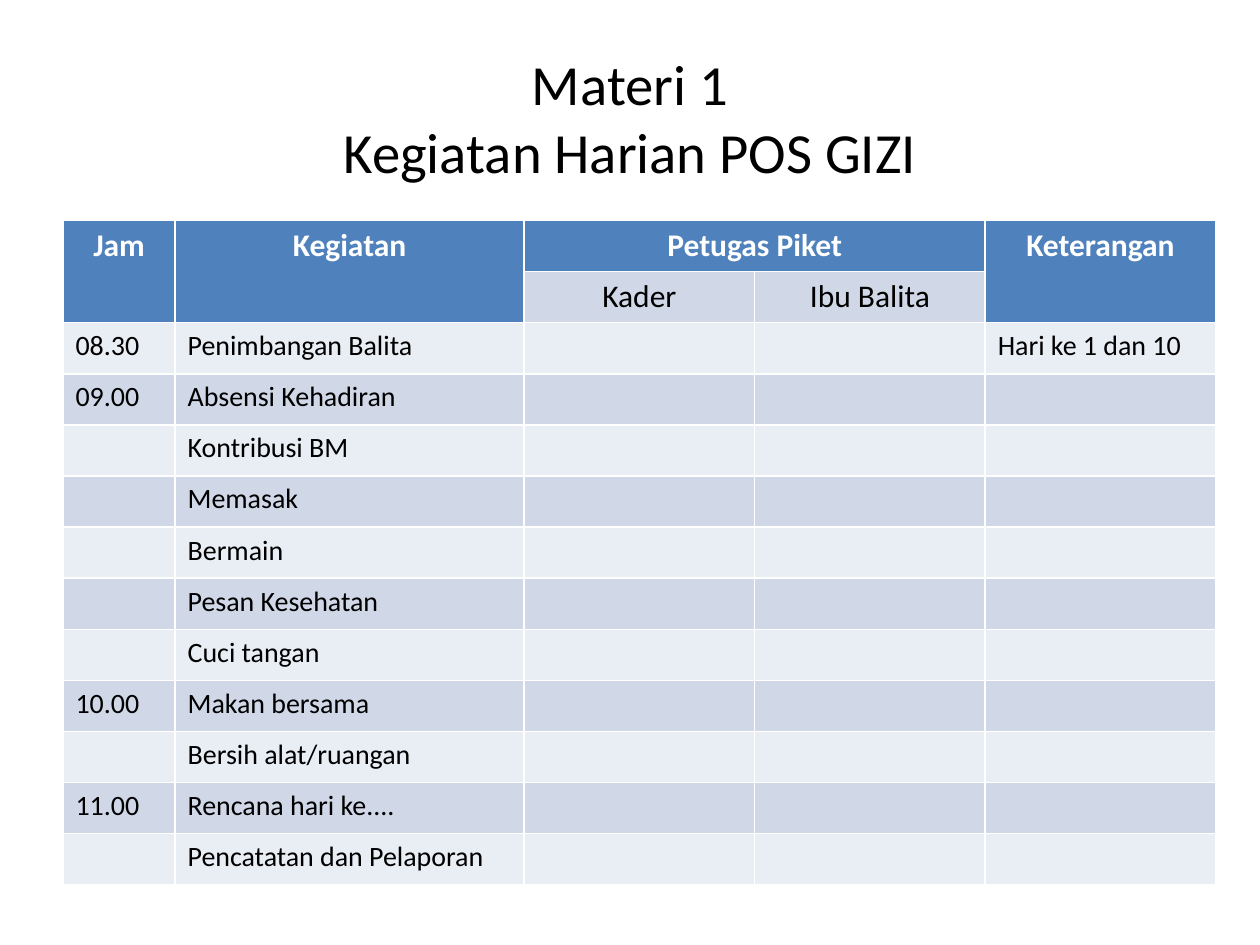
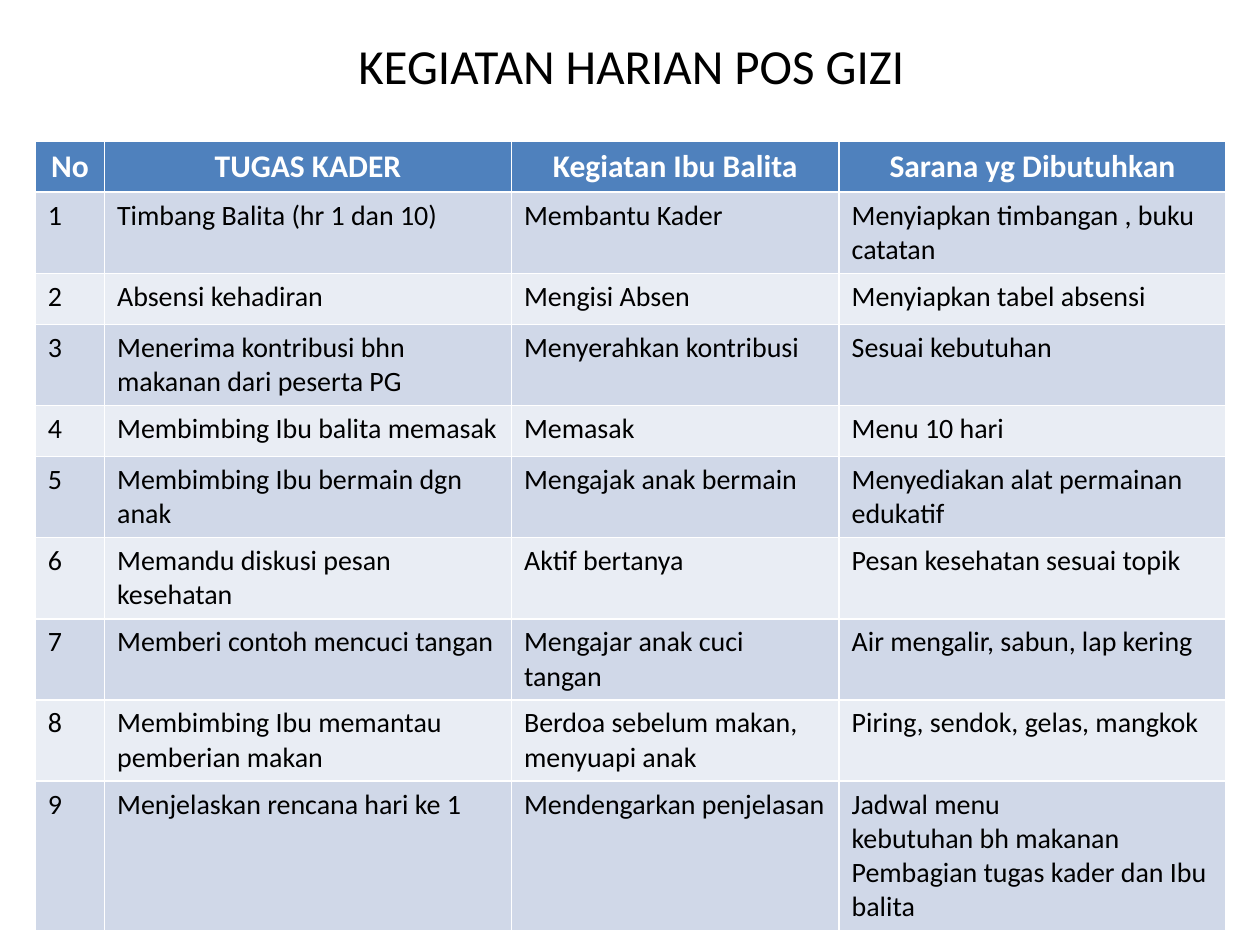
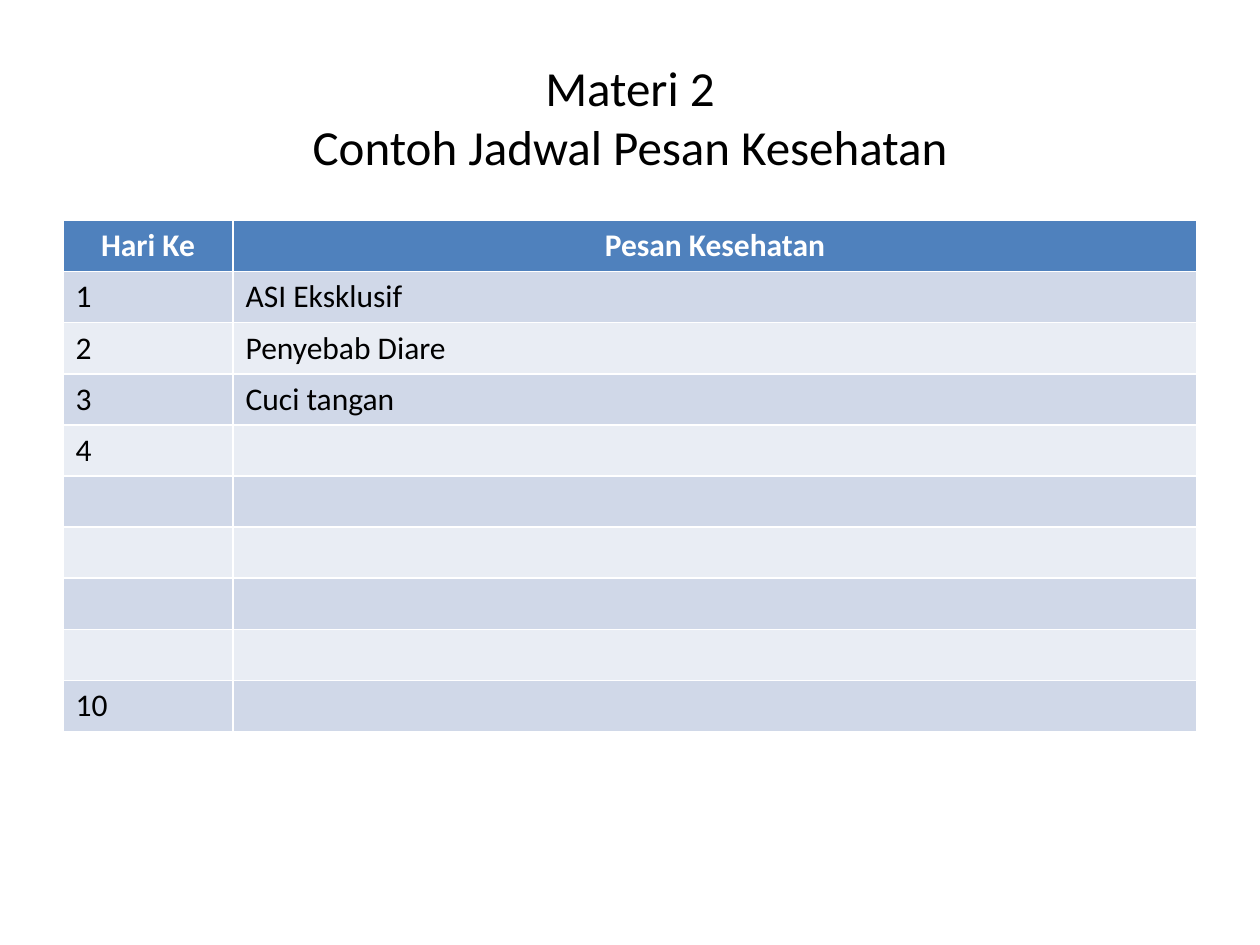
from dataclasses import dataclass

from pptx import Presentation
from pptx.dml.color import RGBColor
from pptx.enum.text import MSO_ANCHOR, MSO_AUTO_SIZE, PP_ALIGN
from pptx.util import Inches, Pt

CENTER, LEFT = PP_ALIGN.CENTER, PP_ALIGN.LEFT
MIDDLE = MSO_ANCHOR.MIDDLE
NO_AUTOFIT = MSO_AUTO_SIZE.NONE
TITLE_ONLY = 5


@dataclass(frozen=True)
class Theme:
    font: str = "Calibri"
    header: RGBColor = RGBColor(0x4F, 0x81, 0xBD)
    bands: tuple = (RGBColor(0xE9, 0xED, 0xF4), RGBColor(0xD0, 0xD8, 0xE8))
    text: RGBColor = RGBColor(0, 0, 0)
    header_text: RGBColor = RGBColor(0xFF, 0xFF, 0xFF)
    header_size: float = 18
    row_height: float = 29.2  # points


THEME = Theme()
TITLE_BOX = (0.5, 0.3, 9, 1.25)

# Merges are (top row, left column, bottom row, right column).
PAGES = [
    {
        "title": "Materi 1\vKegiatan Harian POS GIZI",
        "title_box": TITLE_BOX,
        "title_size": 32.4,
        "table_at": (0.5, 1.75),
        "columns": (0.89, 2.77, 1.83, 1.83, 1.83),
        "body_size": 16,
        "heading_rows": 2,
        "merges": [(0, 0, 1, 0), (0, 1, 1, 1), (0, 2, 0, 3), (0, 4, 1, 4)],
        "rows": [
            ("Jam", "Kegiatan", "Petugas Piket", "", "Keterangan"),
            ("", "", "Kader", "Ibu Balita", ""),
            ("08.30", "Penimbangan Balita", "", "", "Hari ke 1 dan 10"),
            ("09.00", "Absensi Kehadiran"),
            ("", "Kontribusi BM"),
            ("", "Memasak"),
            ("", "Bermain"),
            ("", "Pesan Kesehatan"),
            ("", "Cuci tangan"),
            ("10.00", "Makan bersama"),
            ("", "Bersih alat/ruangan"),
            ("11.00", "Rencana hari ke...."),
            ("", "Pencatatan dan Pelaporan"),
        ],
    },
    {
        "title": "KEGIATAN HARIAN POS GIZI",
        "title_box": (0.51, 0.13, 9, 0.77),
        "title_size": 28,
        "table_at": (0.28, 1.12),
        "columns": (0.55, 3.23, 2.6, 3.07),
        "body_size": 16,
        "heading_rows": 1,
        "merges": [],
        "rows": [
            ("No", "TUGAS KADER", "Kegiatan Ibu Balita", "Sarana yg Dibutuhkan"),
            ("1", "Timbang Balita (hr 1 dan 10)", "Membantu Kader",
             "Menyiapkan timbangan , buku catatan"),
            ("2", "Absensi kehadiran", "Mengisi Absen", "Menyiapkan tabel absensi"),
            ("3", "Menerima kontribusi bhn makanan dari peserta PG",
             "Menyerahkan kontribusi", "Sesuai kebutuhan"),
            ("4", "Membimbing Ibu balita memasak", "Memasak", "Menu 10 hari"),
            ("5", "Membimbing Ibu bermain dgn anak", "Mengajak anak bermain",
             "Menyediakan alat permainan edukatif"),
            ("6", "Memandu diskusi pesan kesehatan", "Aktif bertanya",
             "Pesan kesehatan sesuai topik"),
            ("7", "Memberi contoh mencuci tangan", "Mengajar anak cuci tangan",
             "Air mengalir, sabun, lap kering"),
            ("8", "Membimbing Ibu memantau pemberian makan",
             "Berdoa sebelum makan, menyuapi anak", "Piring, sendok, gelas, mangkok"),
            ("9", "Menjelaskan rencana hari ke 1", "Mendengarkan penjelasan",
             "Jadwal menu\nkebutuhan bh makanan\nPembagian tugas kader dan Ibu balita"),
        ],
    },
    {
        "title": "Materi 2\vContoh Jadwal Pesan Kesehatan",
        "title_box": TITLE_BOX,
        "title_size": 28,
        "table_at": (0.5, 1.75),
        "columns": (1.35, 7.65),
        "body_size": 18,
        "heading_rows": 1,
        "merges": [],
        "rows": [
            ("Hari Ke", "Pesan Kesehatan"),
            ("1", "ASI Eksklusif"),
            ("2", "Penyebab Diare"),
            ("3", "Cuci tangan"),
            ("4",), (), (), (), (),
            ("10",),
        ],
    },
]


def format_text(frame, size, color, align, bold=False):
    for para in frame.paragraphs:
        para.alignment = align
        for span in para.runs:
            span.font.name = THEME.font
            span.font.size = Pt(size)
            span.font.bold = bold
            span.font.color.rgb = color


def set_title(page, content):
    title = page.shapes.title
    title.left, title.top, title.width, title.height = map(Inches, content["title_box"])
    frame = title.text_frame
    frame.text = content["title"]
    frame.auto_size = NO_AUTOFIT
    frame.vertical_anchor = MIDDLE
    format_text(frame, content["title_size"], THEME.text, CENTER)


def format_cell(cell, row, content):
    """Style a cell as header, subheading or banded body by its row."""
    is_header = row == 0
    is_heading = row < content["heading_rows"]
    cell.fill.solid()
    cell.fill.fore_color.rgb = THEME.header if is_header else THEME.bands[row % 2]
    format_text(
        cell.text_frame,
        THEME.header_size if is_heading else content["body_size"],
        THEME.header_text if is_header else THEME.text,
        CENTER if is_heading else LEFT,
        is_header,
    )


def add_schedule(page, content):
    rows, columns = content["rows"], content["columns"]
    left, top = map(Inches, content["table_at"])
    table = page.shapes.add_table(
        len(rows), len(columns), left, top,
        Inches(sum(columns)), Pt(THEME.row_height * len(rows)),
    ).table
    for column, width in zip(table.columns, columns):
        column.width = Inches(width)
    for first_row, first_column, last_row, last_column in content["merges"]:
        table.cell(first_row, first_column).merge(table.cell(last_row, last_column))
    for row, texts in enumerate(rows):
        for column, text in enumerate(texts):
            if text:
                table.cell(row, column).text_frame.text = text
        for cell in table.rows[row].cells:
            if not cell.is_spanned:
                format_cell(cell, row, content)


def main():
    deck = Presentation()
    deck.slide_width, deck.slide_height = Inches(10), Inches(7.5)
    for content in PAGES:
        page = deck.slides.add_slide(deck.slide_layouts[TITLE_ONLY])
        set_title(page, content)
        add_schedule(page, content)
    deck.save("out.pptx")


if __name__ == "__main__":
    main()
